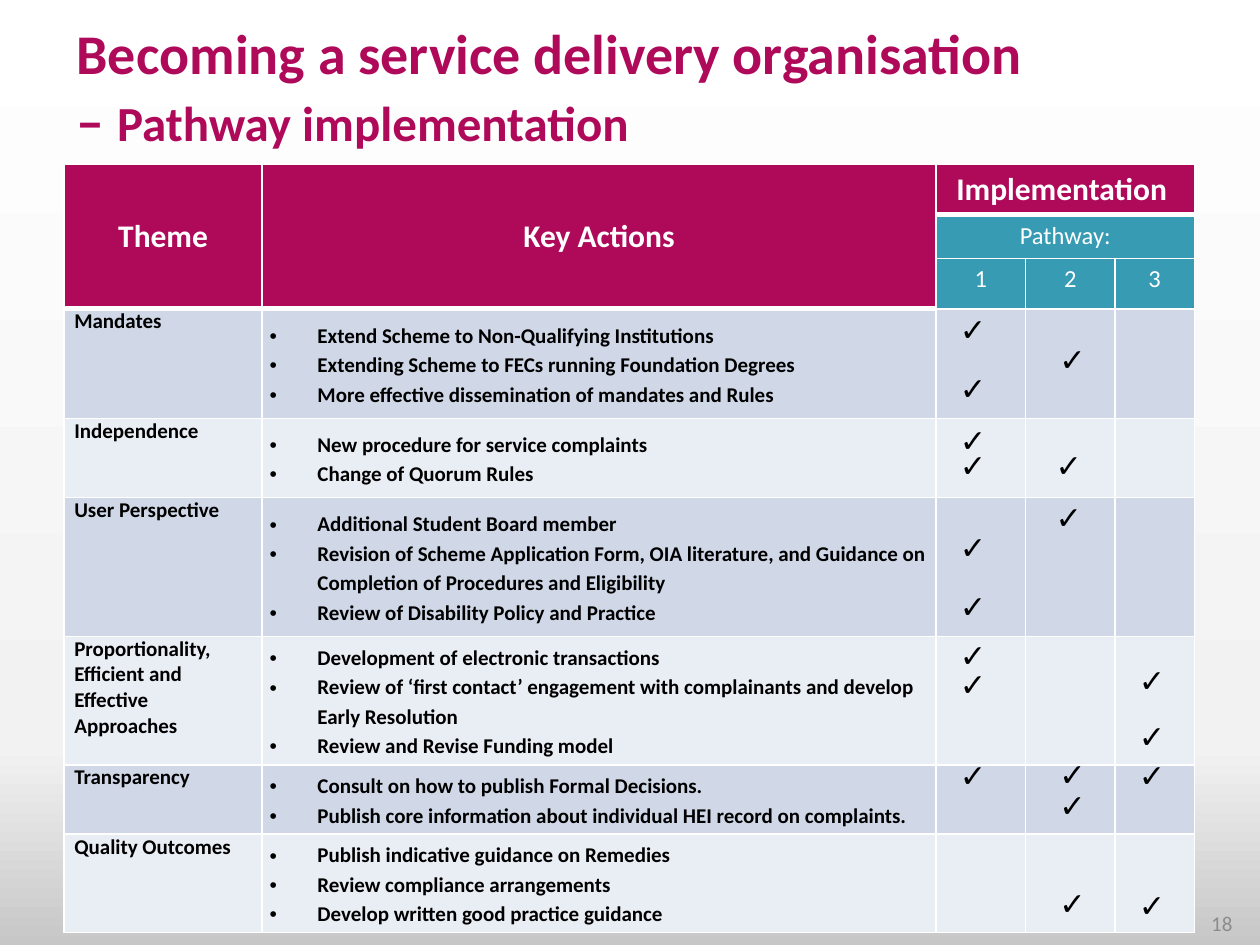
from copy import deepcopy

from lxml.etree import SubElement
from pptx import Presentation
from pptx.dml.color import RGBColor
from pptx.enum.text import MSO_ANCHOR as ANCHOR, PP_ALIGN as ALIGN
from pptx.oxml.ns import qn
from pptx.util import Inches, Pt

BERRY = RGBColor(0xAF, 0x0A, 0x5A)
TEAL = RGBColor(0x37, 0x9B, 0xB4)
BAND_DARK = RGBColor(0xD0, 0xD8, 0xE8)
BAND_LIGHT = RGBColor(0xE9, 0xED, 0xF4)
WHITE = RGBColor(0xFF, 0xFF, 0xFF)
BLACK = RGBColor(0, 0, 0)
GREY = RGBColor(0x8C, 0x8C, 0x8C)
BACKGROUND = [(0, WHITE), (0.79, RGBColor(0xF2, 0xF2, 0xF2)),
              (1, RGBColor(0xC7, 0xC7, 0xC7))]

TITLE = [("Becoming a service delivery organisation – ", 32),
         ("Pathway implementation", 28)]

# Header cells: row, column, rows spanned, columns spanned, text
HEADINGS = [
    (0, 0, 3, 1, "Theme"),
    (0, 1, 3, 1, "Key Actions"),
    (0, 2, 1, 3, "Implementation "),
]
PATHWAYS = [
    (1, 2, 1, 3, "Pathway:"),
    (2, 2, 1, 1, "1"),
    (2, 3, 1, 1, "2"),
    (2, 4, 1, 1, "3"),
]
THEMES = [
    ("Mandates", [
        "Extend Scheme to Non-Qualifying Institutions",
        "Extending Scheme to FECs running Foundation Degrees",
        "More effective dissemination of mandates and Rules"]),
    ("Independence", [
        "New procedure for service complaints",
        "Change of Quorum Rules"]),
    ("User Perspective", [
        "Additional Student Board member",
        "Revision of Scheme Application Form, OIA literature, and Guidance on "
        "Completion of Procedures and Eligibility",
        "Review of Disability Policy and Practice"]),
    ("Proportionality, Efficient and Effective Approaches", [
        "Development of electronic transactions",
        "Review of ‘first contact’ engagement with complainants and develop "
        "Early Resolution",
        "Review and Revise Funding model"]),
    ("Transparency", [
        "Consult on how to publish Formal Decisions.",
        "Publish core information about individual HEI record on complaints."]),
    ("Quality Outcomes", [
        "Publish indicative guidance on Remedies",
        "Review compliance arrangements",
        "Develop written good practice guidance"]),
]
COL_WIDTHS = [1.57, 5.35, 0.71, 0.71, 0.63]
ROW_HEIGHTS = [0.35, 0.35, 0.39, 0.87, 0.63, 1.1, 1.02, 0.55, 0.78]

# Tick positions: left edge of each pathway column, then the tops
TICKS = [
    (7.52, [2.41, 2.88, 3.29, 3.49, 4.14, 4.61, 5, 5.23, 5.95]),
    (8.31, [2.65, 5.94, 6.19, 6.97]),
    (8.28, [3.49, 3.9]),
    (8.94, [5.2, 5.64, 5.95, 6.98]),
]


def add_run(p, text, size, color, bold=False, font="Calibri"):
    r = p.add_run()
    r.text = text
    r.font.name, r.font.size, r.font.bold = font, Pt(size), bold
    r.font.color.rgb = color


def add_text(s, left, top, width, height, runs, color, bold=False,
             font="Calibri", align=ALIGN.LEFT, anchor=ANCHOR.TOP, wrap=True):
    tf = s.shapes.add_textbox(*map(Inches, (left, top, width, height))).text_frame
    tf.word_wrap, tf.vertical_anchor = wrap, anchor
    p = tf.paragraphs[0]
    p.alignment = align
    for text, size in runs:
        add_run(p, text, size, color, bold, font)


def style_cell(cell, fill, bottom=1):
    tc_pr = cell._tc.get_or_add_tcPr()
    for side, width in (("L", 1), ("R", 1), ("T", 1), ("B", bottom)):
        ln = SubElement(tc_pr, qn(f"a:ln{side}"), w=str(Pt(width)))
        SubElement(SubElement(ln, qn("a:solidFill")), qn("a:srgbClr"), val=str(WHITE))
    cell.fill.solid()
    cell.fill.fore_color.rgb = fill


def set_margins(cell):
    cell.margin_left = cell.margin_right = Inches(0.06)
    cell.margin_top = cell.margin_bottom = 0


def add_bullet(p):
    p.line_spacing = 1.15
    p_pr = p._p.get_or_add_pPr()
    p_pr.set("marL", str(Inches(0.38)))
    p_pr.set("indent", str(Inches(-0.38)))
    SubElement(p_pr, qn("a:buFont"), typeface="Arial")
    SubElement(p_pr, qn("a:buChar"), char="•")
    tabs = SubElement(p_pr, qn("a:tabLst"))
    SubElement(tabs, qn("a:tab"), pos=str(Inches(0.31)), algn="l")


prs = Presentation()
prs.slide_width, prs.slide_height = Inches(10), Inches(7.5)
s = prs.slides.add_slide(prs.slide_layouts[6])

# Background gradient, top to bottom
bg = s.background.fill
bg.gradient()
bg.gradient_angle = 270
gs_list = s.element.find(".//" + qn("a:gsLst"))
gs_list.append(deepcopy(gs_list[0]))
for stop, (position, color) in zip(bg.gradient_stops, BACKGROUND):
    stop.position = position
    stop.color.rgb = color

add_text(s, 0.51, 0.13, 7.76, 1.1, TITLE, BERRY, bold=True, anchor=ANCHOR.MIDDLE)

# Table grid
table = s.shapes.add_table(
    len(ROW_HEIGHTS), len(COL_WIDTHS), Inches(0.51), Inches(1.3),
    Inches(sum(COL_WIDTHS)), Inches(sum(ROW_HEIGHTS))).table
table.first_row = table.horz_banding = False
for col, width in zip(table.columns, COL_WIDTHS):
    col.width = Inches(width)
for row, height in zip(table.rows, ROW_HEIGHTS):
    row.height = Inches(height)

# Header rows
for cells, fill, size, bold, bottom in ((HEADINGS, BERRY, 18, True, 3),
                                        (PATHWAYS, TEAL, 14, False, 1)):
    for row, col, n_rows, n_cols, text in cells:
        for i in range(row, row + n_rows):
            for j in range(col, col + n_cols):
                style_cell(table.cell(i, j), fill, bottom)
        cell = table.cell(row, col)
        if n_rows * n_cols > 1:
            cell.merge(table.cell(row + n_rows - 1, col + n_cols - 1))
            cell.vertical_anchor = ANCHOR.MIDDLE
        p = cell.text_frame.paragraphs[0]
        p.alignment = ALIGN.CENTER
        add_run(p, text, size, WHITE, bold)

# Theme rows
for i, (theme, actions) in enumerate(THEMES):
    cells = table.rows[i + len(ROW_HEIGHTS) - len(THEMES)].cells
    for cell in cells:
        style_cell(cell, BAND_LIGHT if i % 2 else BAND_DARK)
    theme_cell, action_cell = cells[0], cells[1]
    set_margins(theme_cell)
    set_margins(action_cell)
    p = theme_cell.text_frame.paragraphs[0]
    p._p.get_or_add_pPr().set("marL", str(Inches(0.02)))
    add_run(p, theme, 12, BLACK, True)
    action_cell.vertical_anchor = ANCHOR.MIDDLE
    tf = action_cell.text_frame
    for k, action in enumerate(actions):
        p = tf.add_paragraph() if k else tf.paragraphs[0]
        add_bullet(p)
        add_run(p, action, 12, BLACK, True)

# Ticks
for left, tops in TICKS:
    for top in tops:
        add_text(s, left, top, 0.39, 0.4, [("✓", 18)], BLACK, font="Arial", wrap=False)

# Slide number
add_text(s, 7.55, 7.13, 2.33, 0.4, [("18", 12)], GREY,
         align=ALIGN.RIGHT, anchor=ANCHOR.MIDDLE)

prs.save("out.pptx")
